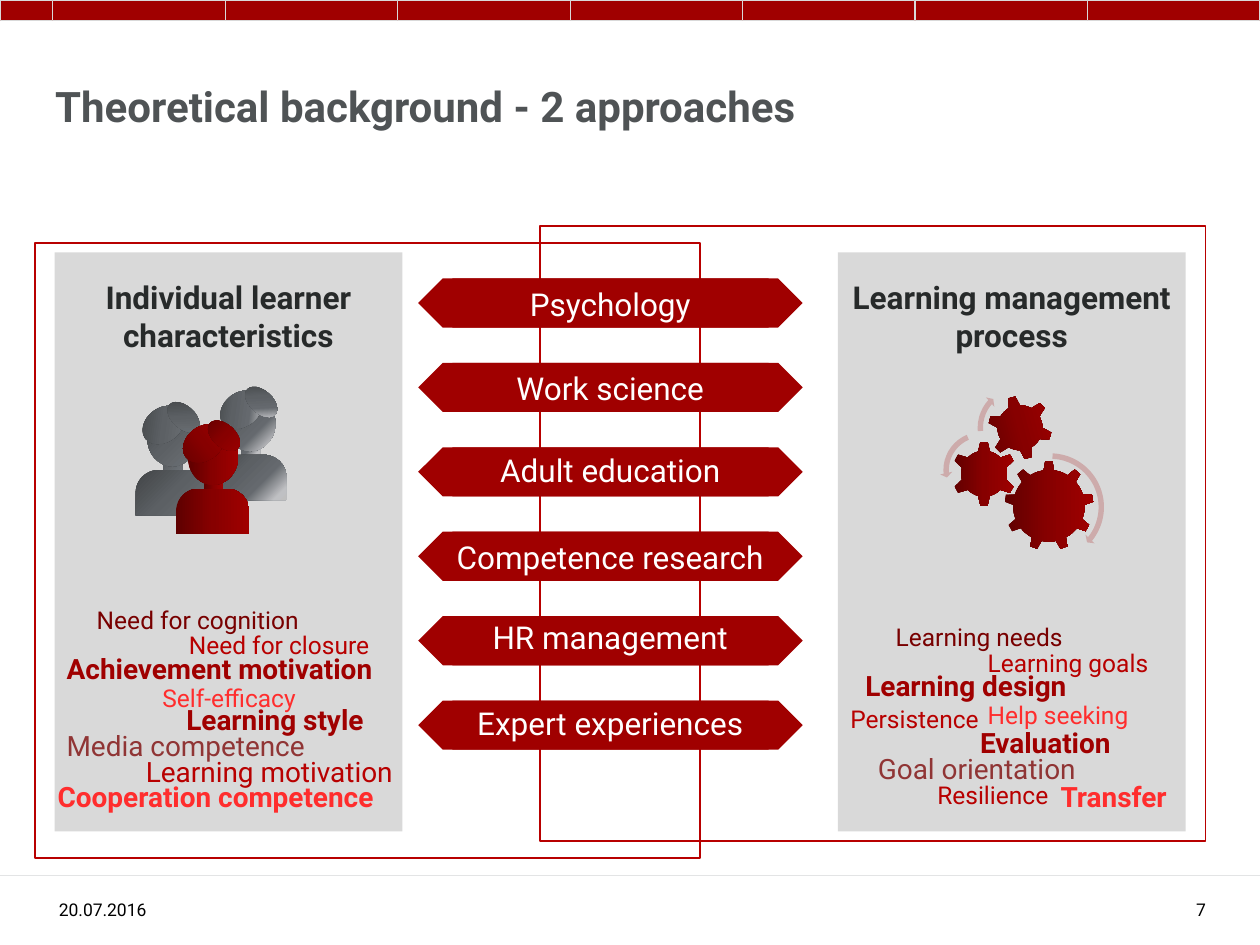
from copy import deepcopy

from lxml.etree import SubElement
from pptx import Presentation
from pptx.dml.color import RGBColor
from pptx.enum.shapes import MSO_CONNECTOR, MSO_SHAPE
from pptx.enum.text import MSO_ANCHOR, PP_ALIGN
from pptx.oxml.ns import qn
from pptx.util import Pt

COLORS = {
    "red": "A00000", "frame": "B80000", "dark": "780000", "bright": "FF2D2D",
    "muted": "903535", "pale": "CDABAB", "panel": "D9D9D9", "rule": "E3E4E5",
    "title": "4F5355", "heading": "272A2A", "black": "000000", "white": "FFFFFF",
}
# Gradients: angle, then position and colour of each stop
GRAY = (45, [(0, "414446"), (50, "5C6064"), (100, "6D7277")])
SHINY = (45, [(0, "414446"), (37, "5C6064"), (64, "65696E"),
              (89, "BFC0C3"), (100, "BFBFBF")])
RED = (0, [(0, "5F0000"), (50, "870000"), (100, "A00000")])


def rgb(name):
    return RGBColor.from_string(COLORS[name])


class SlideBuilder:
    font = "Roboto"

    def __init__(self, slide):
        self.slide = slide

    def shape(self, kind, left, top, width, height, fill=None, line=None,
              line_width=1, rotation=0, adjustments=(), flip=False):
        shape = self.slide.shapes.add_shape(
            kind, Pt(left), Pt(top), Pt(width), Pt(height))
        shape.shadow.inherit = False
        shape.rotation = rotation
        for index, value in enumerate(adjustments):
            shape.adjustments[index] = value
        if flip:
            shape._element.spPr.get_or_add_xfrm().set("flipH", "1")
        if fill is None:
            shape.fill.background()
        elif isinstance(fill, tuple):
            self.gradient(shape, *fill)
        else:
            shape.fill.solid()
            shape.fill.fore_color.rgb = rgb(fill)
        if line:
            shape.line.color.rgb = rgb(line)
            shape.line.width = Pt(line_width)
        else:
            shape.line.fill.background()
        return shape

    def gradient(self, shape, angle, stops):
        shape.fill.gradient()
        shape.fill.gradient_angle = 360 - angle
        stop_list = shape._element.spPr.find(".//" + qn("a:gsLst"))
        template = deepcopy(stop_list[0])
        for child in list(stop_list):
            stop_list.remove(child)
        for _ in stops:
            stop_list.append(deepcopy(template))
        for stop, (position, color) in zip(shape.fill.gradient_stops, stops):
            stop.position = position / 100
            stop.color.rgb = RGBColor.from_string(color)

    def fill_text(self, frame, lines, size, color, bold=False,
                  align=PP_ALIGN.LEFT, anchor=MSO_ANCHOR.TOP):
        frame.word_wrap = True
        frame.vertical_anchor = anchor
        frame.text = lines
        for paragraph in frame.paragraphs:
            paragraph.alignment = align
            paragraph.font.name = self.font
            paragraph.font.size = Pt(size)
            paragraph.font.bold = bold
            paragraph.font.color.rgb = rgb(color)

    def text(self, left, top, width, height, lines, size, color, **style):
        box = self.slide.shapes.add_textbox(
            Pt(left), Pt(top), Pt(width), Pt(height))
        self.fill_text(box.text_frame, lines, size, color, **style)

    def panel(self, left, lines):
        shape = self.shape(MSO_SHAPE.RECTANGLE, left, 144.3, 198.7, 330.8, "panel")
        shape.text_frame.margin_top = Pt(14.5)
        self.fill_text(shape.text_frame, lines, 18, "heading", bold=True,
                       align=PP_ALIGN.CENTER)

    def rule(self, left, top, right):
        connector = self.slide.shapes.add_connector(
            MSO_CONNECTOR.STRAIGHT, Pt(left), Pt(top), Pt(right), Pt(top))
        connector.line.color.rgb = rgb("rule")
        connector.line.width = Pt(0.5)
        SubElement(connector._element.spPr, qn("a:effectLst"))

    def person(self, left, top, fill):
        """Draw a figure; left and top are those of the shoulders."""
        self.shape(MSO_SHAPE.RECTANGLE, left + 16, top - 14.4, 10.8, 14.4, fill)
        self.shape(MSO_SHAPE.OVAL, left + 6.7, top - 33.8, 28.8, 31.7, fill)
        self.shape(MSO_SHAPE.ROUND_2_SAME_RECTANGLE, left, top, 41.8, 25.9,
                   fill, adjustments=(0.5, 0))
        self.shape(MSO_SHAPE.OVAL, left + 2.9, top - 35.5, 25.9, 19.4, fill,
                   rotation=323.1)
        self.shape(MSO_SHAPE.OVAL, left + 16.6, top - 36.7, 21.6, 13, fill,
                   rotation=41.8)

    def double_arrow(self, top, label, nudge):
        for left, flip in ((258.5, False), (239, True)):
            self.shape(MSO_SHAPE.PENTAGON, left, top, 200.2, 28.1, "red", flip=flip)
        self.text(238.7, top + nudge, 220, 28.8, label, 18, "white",
                  align=PP_ALIGN.CENTER)


def main():
    presentation = Presentation()
    presentation.slide_width, presentation.slide_height = Pt(720), Pt(540)
    slide = presentation.slides.add_slide(presentation.slide_layouts[6])
    builder = SlideBuilder(slide)

    # Top bar and footer rule
    first, segment = 30.2, 98.54
    for index in reversed(range(7)):
        builder.shape(MSO_SHAPE.RECTANGLE, first + index * segment, 0, segment, 12,
                      "red", "panel", 0.5)
    builder.shape(MSO_SHAPE.RECTANGLE, 0, 0, first, 12, "red", "panel", 0.5)
    builder.rule(0, 500.4, 720)

    # Overlapping frames
    for left, top in ((308.7, 129), (20, 138.8)):
        builder.shape(MSO_SHAPE.RECTANGLE, left, top, 380.2, 351.6, line="frame")

    # Title and footer
    builder.text(24.5, 42.5, 499, 68.4, "Theoretical background - 2 approaches",
                 24, "title", bold=True)
    builder.text(26.6, 500.4, 79.2, 28.8, "20.07.2016", 10, "black",
                 anchor=MSO_ANCHOR.BOTTOM)
    builder.text(637.2, 500.4, 59, 28.8, "7", 10, "black",
                 align=PP_ALIGN.RIGHT, anchor=MSO_ANCHOR.BOTTOM)

    # Panels
    builder.panel(478.8, "Learning management\nprocess")
    builder.panel(31.2, "Individual learner characteristics")

    # Group of learners
    for left, top, fill in ((77.5, 268.6, GRAY), (121.9, 259.9, SHINY),
                            (100.6, 279.2, RED)):
        builder.person(left, top, fill)

    # Gears and the arrows around them
    for kind, left, top, size, rotation in (
            (MSO_SHAPE.GEAR_9, 573.8, 263.5, 51.1, 0),
            (MSO_SHAPE.GEAR_6, 543.6, 252, 37.4, 0),
            (MSO_SHAPE.GEAR_6, 564.5, 226.1, 36.7, 345)):
        builder.shape(kind, left, top, size, size, RED, rotation=rotation)
    for kind, left, top, size, adjustments in (
            (MSO_SHAPE.CIRCULAR_ARROW, 567.4, 257, 65.5,
             (0.047, 2.99, 23.285, 163.509, 0.055)),
            (MSO_SHAPE.LEFT_CIRCULAR_ARROW, 537.1, 244.8, 47.5,
             (0.065, 4.3, 104.891, 148.378, 0.075)),
            (MSO_SHAPE.CIRCULAR_ARROW, 556.6, 218.9, 51.1,
             (0.06, 3.941, 133.138, 105.082, 0.07))):
        builder.shape(kind, left, top, size, size, "pale", adjustments=adjustments)

    # Disciplines, with a small vertical shift of each label
    disciplines = [("Psychology", 0), ("Work science", 0),
                   ("Adult education", -1.4), ("Competence research", 0),
                   ("HR management", -2.2), ("Expert experiences", -1.4)]
    for index, (label, nudge) in enumerate(disciplines):
        builder.double_arrow(159.1 + index * 48.24, label, nudge)

    # Word clouds: text, left, top, width, size, colour, bold
    words = [
        ("Self-efficacy", 85.7, 386.6, 96.5, 14, "bright", False),
        ("Achievement motivation", 31, 368.6, 200.9, 16, "red", True),
        ("Need for cognition", 48.2, 342, 143.3, 14, "dark", False),
        ("Need for closure", 100.8, 356.4, 137.5, 14, "frame", False),
        ("Learning motivation", 76.3, 427.7, 167, 16, "frame", False),
        ("Media competence", 31, 412.6, 153.4, 16, "muted", False),
        ("Cooperation competence", 25.9, 442.1, 201.6, 16, "bright", True),
        ("Learning style", 99.4, 398.2, 124.6, 16, "red", True),
        ("Help seeking", 557.3, 396.7, 96.5, 14, "bright", False),
        ("Learning design", 487.4, 378.7, 200.9, 16, "red", True),
        ("Learning needs", 504.7, 352.1, 143.3, 14, "dark", False),
        ("Learning goals", 557.3, 366.5, 120.2, 14, "frame", False),
        ("Goal orientation", 494.6, 426.2, 131.8, 16, "muted", False),
        ("Transfer", 599, 442.1, 84.2, 16, "bright", True),
        ("Evaluation", 553, 411.1, 124.6, 16, "red", True),
        ("Persistence", 478.8, 398.9, 99.4, 14, "frame", False),
        ("Resilience", 528.5, 442.1, 109.4, 14, "frame", False),
    ]
    for word, left, top, width, size, color, bold in words:
        height = 26.6 if size == 16 else 24.5
        builder.text(left, top, width, height, word, size, color, bold=bold)

    presentation.save("out.pptx")


if __name__ == "__main__":
    main()
